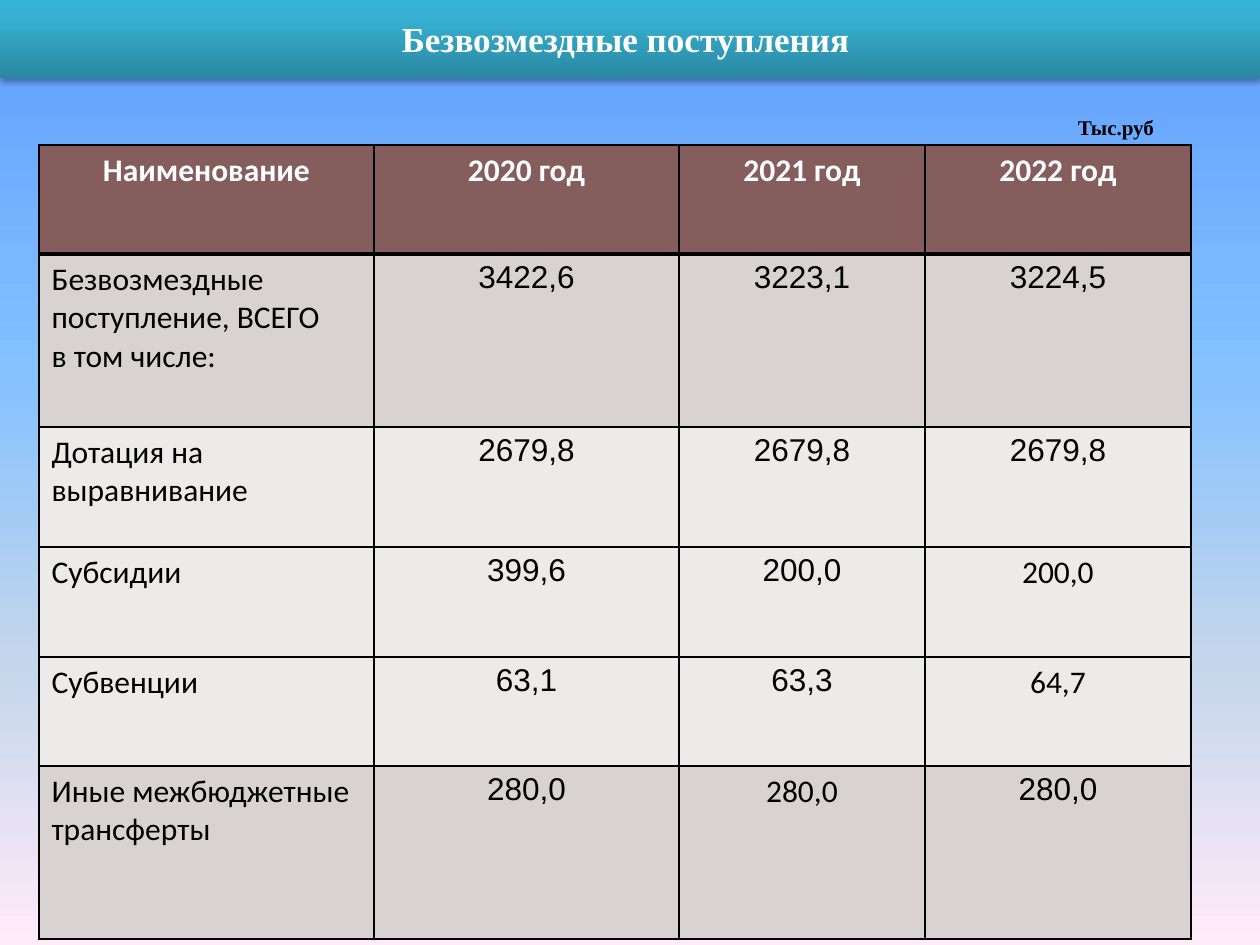
"""Build the slide with the table of gratuitous receipts for 2020-2022."""
import pptx
import pptx.dml.color
import pptx.enum.text
import pptx.oxml
import pptx.oxml.ns
import pptx.util
from lxml import etree

PX = 914400 / 126
NS = 'xmlns:a="http://schemas.openxmlformats.org/drawingml/2006/main"'
ALIGN = pptx.enum.text.PP_ALIGN
COLORS = {"text": "000000", "white": "FFFFFF", "header": "855D5D",
          "dark": "D9D2D2", "light": "EDEAEA", "border": "000000"}
BACKGROUND = [(0, "5E9EFF"), (40, "85C2FF"), (70, "C4D6EB"), (100, "FFEBFA")]
BANNER = [(0, "2A88A2"), (80, "37B1D2"), (100, "34B4D6")]


def set_gradient(fill, root, stops, angle):
    fill.gradient()
    fill.gradient_angle = angle
    gs_list = root.find(".//" + pptx.oxml.ns.qn("a:gsLst"))
    for gs in list(gs_list):
        gs_list.remove(gs)
    for pos, color in stops:
        gs_list.append(pptx.oxml.parse_xml(
            f'<a:gs {NS} pos="{pos * 1000}"><a:srgbClr val="{color}"/></a:gs>'))


def format_text(tf, font, size, color, bold, align):
    for p in tf.paragraphs:
        p.alignment = align
        for r in p.runs:
            r.font.name = font
            r.font.size = pptx.util.Pt(size)
            r.font.bold = bold
            r.font.color.rgb = pptx.dml.color.RGBColor.from_string(COLORS[color])


prs = pptx.Presentation()
prs.slide_width, prs.slide_height = round(1260 * PX), round(945 * PX)
s = prs.slides.add_slide(prs.slide_layouts[5])
set_gradient(s.background.fill, s.element, BACKGROUND, 270)

title = s.shapes.title
title.left, title.top, title.width, title.height = 0, 0, round(1260 * PX), round(78 * PX)
set_gradient(title.fill, title.element, BANNER, 90)
title.shadow.inherit = False
effects = title.element.spPr.find(pptx.oxml.ns.qn("a:effectLst"))
effects.append(etree.fromstring(
    f'<a:outerShdw {NS} blurRad="40000" dist="23000" dir="5400000" rotWithShape="0">'
    '<a:srgbClr val="000000"><a:alpha val="35000"/></a:srgbClr></a:outerShdw>'))
tf = title.text_frame
tf.text = "Безвозмездные поступления "
tf.auto_size = pptx.enum.text.MSO_AUTO_SIZE.NONE
tf.vertical_anchor = pptx.enum.text.MSO_ANCHOR.MIDDLE
format_text(tf, "Times New Roman", 20, "white", True, ALIGN.CENTER)

unit = s.shapes.add_textbox(*[round(n * PX) for n in (1023, 108, 186, 38)])
tf = unit.text_frame
tf.word_wrap = True
tf.text = "Тыс.руб"
tf.auto_size = pptx.enum.text.MSO_AUTO_SIZE.SHAPE_TO_FIT_TEXT
format_text(tf, "Times New Roman", 12, "text", True, ALIGN.CENTER)

rows = [
    ("header", 109, ["Наименование", "2020 год", "2021 год", "2022 год"]),
    ("dark", 173, ["Безвозмездные поступление, ВСЕГО\nв том числе:", "3422,6", "3223,1", "3224,5"]),
    ("light", 120, ["Дотация на выравнивание", "2679,8", "2679,8", "2679,8"]),
    ("light", 110, ["Субсидии", "399,6", "200,0", "200,0"]),
    ("light", 109, ["Субвенции", "63,1", "63,3", "64,7"]),
    ("dark", 173, ["Иные межбюджетные трансферты", "280,0", "280,0", "280,0"]),
]
widths = [335, 305, 246, 266]
calibri_values = {(3, 3), (4, 3), (5, 2)}
heights = [height for _, height, _ in rows]
frame = s.shapes.add_table(len(rows), len(widths), round(39 * PX), round(145 * PX),
                           round(sum(widths) * PX), round(sum(heights) * PX))
table = frame.table
table.horz_banding = False
for column, width in zip(table.columns, widths):
    column.width = round(width * PX)

for i, (fill, height, texts) in enumerate(rows):
    table.rows[i].height = round(height * PX)
    is_header = i == 0
    for j, text in enumerate(texts):
        cell = table.cell(i, j)
        cell.text_frame.text = text
        is_calibri = is_header or j == 0 or (i, j) in calibri_values
        format_text(cell.text_frame, "Calibri" if is_calibri else "Arial", 18,
                    "white" if is_header else "text", is_header,
                    ALIGN.CENTER if is_header or j else ALIGN.LEFT)
        tcPr = cell._tc.get_or_add_tcPr()
        for side in "LRTB":
            thick = (i, side) in ((0, "B"), (1, "T"))
            tcPr.append(pptx.oxml.parse_xml(
                f'<a:ln{side} {NS} w="{38100 if thick else 12700}"><a:solidFill>'
                f'<a:srgbClr val="{COLORS["border"]}"/></a:solidFill></a:ln{side}>'))
        cell.fill.solid()
        cell.fill.fore_color.rgb = pptx.dml.color.RGBColor.from_string(COLORS[fill])

prs.save("out.pptx")
